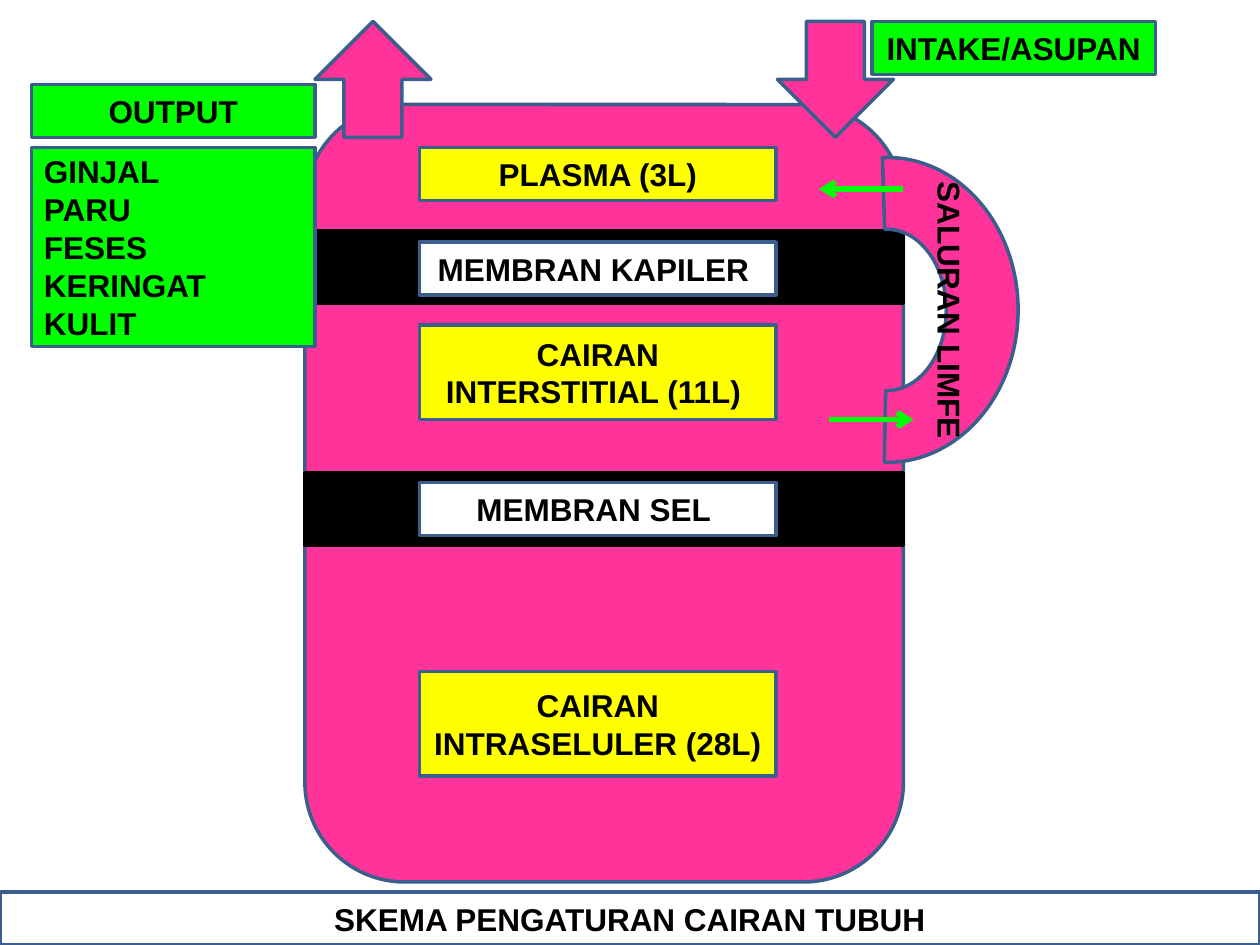
from pptx import Presentation
from pptx.dml.color import RGBColor
from pptx.enum import shapes, text
from pptx.oxml import ns, xmlchemy as xc
from pptx.util import Inches, Pt

PINK, GREEN, YELLOW = "FF3399", "00FF00", "FFFF00"
WHITE, BLACK, EDGE = "FFFFFF", "000000", "3A5F8C"
KIND = shapes.MSO_SHAPE
CENTER, LEFT = text.PP_ALIGN.CENTER, text.PP_ALIGN.LEFT

BODY = (2.42, 0.83, 4.75, 6.17)
BANDS = [1.83, 3.75]
LAYERS = [
    ("CAIRAN INTRASELULER (28L)", 5.33, 0.83, YELLOW),
    ("MEMBRAN SEL ", 3.83, 0.42, WHITE),
    ("MEMBRAN KAPILER ", 1.92, 0.42, WHITE),
    ("PLASMA (3L)", 1.17, 0.42, YELLOW),
    ("CAIRAN INTERSTITIAL (11L) ", 2.58, 0.75, YELLOW),
]
LYMPH = "SALURAN LIMFE"
ARC = (106.958, 0.616, 0.274)
FLOWS = [(6.58, 7.25, 3.33), (7.17, 6.5, 1.5)]
ARROWS = [(KIND.DOWN_ARROW, 6.17), (KIND.UP_ARROW, 2.5)]
ORGANS = ["GINJAL", "PARU", "FESES", "KERINGAT", "KULIT"]
LABELS = [
    (["INTAKE/ASUPAN"], (6.92, 0.17, 2.25, 0.42), GREEN, CENTER),
    (["OUTPUT"], (0.25, 0.67, 2.25, 0.42), GREEN, CENTER),
    (ORGANS, (0.25, 1.17, 2.25, 1.58), GREEN, LEFT),
    (["SKEMA PENGATURAN CAIRAN TUBUH"], (0, 7.08, 10, 0.42), WHITE, CENTER),
]


def color(value):
    return RGBColor.from_string(value)


def add_part(slide, kind, box, fill, lines=(), align=CENTER, edge=EDGE):
    part = slide.shapes.add_shape(kind, *map(Inches, box))
    part.shadow.inherit = False
    part.fill.solid()
    part.fill.fore_color.rgb = color(fill)
    part.line.color.rgb = color(edge)
    part.line.width = Pt(2)
    frame = part.text_frame
    frame.vertical_anchor = text.MSO_ANCHOR.MIDDLE
    frame.word_wrap = True
    for i, line in enumerate(lines):
        para = frame.add_paragraph() if i else frame.paragraphs[0]
        para.text = line
        para.alignment = align
        para.font.name = "Arial"
        para.font.size = Pt(18)
        para.font.bold = True
        para.font.color.rgb = color(BLACK)
    return part


def add_flow(slide, start, end, y):
    flow = slide.shapes.add_connector(
        shapes.MSO_CONNECTOR.STRAIGHT, *map(Inches, (start, y, end, y)))
    flow.line.color.rgb = color(GREEN)
    flow.line.width = Pt(3)
    tail = xc.OxmlElement("a:tailEnd")
    tail.set("type", "arrow")
    props = flow.line._get_or_add_ln()
    props.append(tail)
    flow._element.spPr.append(xc.OxmlElement("a:effectLst"))


def main():
    deck = Presentation()
    deck.slide_width, deck.slide_height = Inches(10), Inches(7.5)
    slide = deck.slides.add_slide(deck.slide_layouts[6])

    add_part(slide, KIND.ROUNDED_RECTANGLE, BODY, PINK)
    for top in BANDS:
        add_part(slide, KIND.RECTANGLE, (BODY[0], top, BODY[2], 0.58), BLACK,
                 edge=BLACK)
    for name, top, height, fill in LAYERS:
        add_part(slide, KIND.RECTANGLE, (3.33, top, 2.83, height), fill, [name])

    lymph = add_part(slide, KIND.BLOCK_ARC, (5.83, 1.42, 2.42, 2.08), PINK, [LYMPH])
    lymph.rotation = 90
    for i, value in enumerate(ARC):
        lymph.adjustments[i] = value

    for flow in FLOWS:
        add_flow(slide, *flow)
    for kind, left in ARROWS:
        add_part(slide, kind, (left, 0.17, 0.92, 0.92), PINK)
    for lines, box, fill, align in LABELS:
        add_part(slide, KIND.RECTANGLE, box, fill, lines, align)

    deck.save("out.pptx")


if __name__ == "__main__":
    main()
